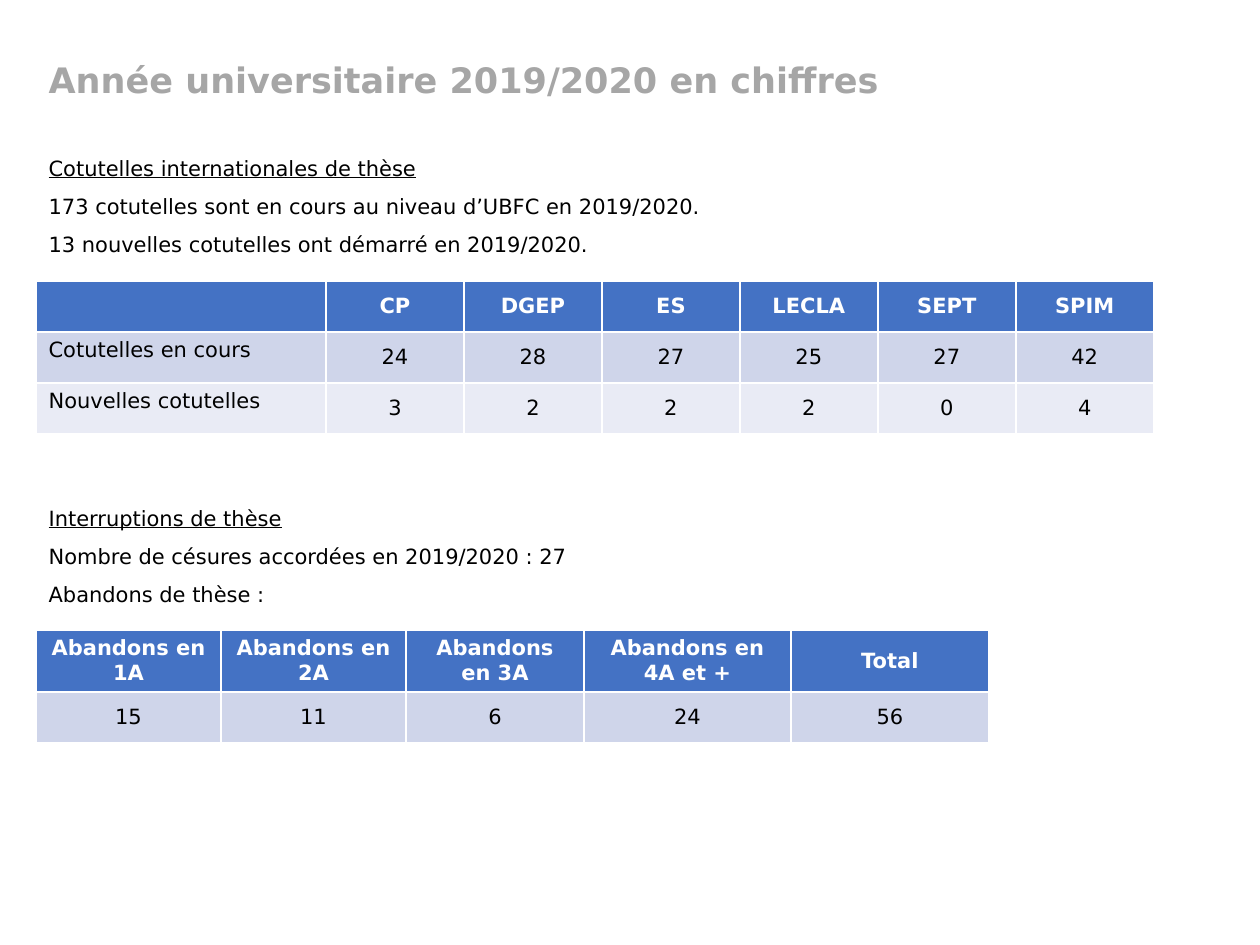
from pptx import Presentation
from pptx.dml.color import RGBColor
from pptx.enum.text import MSO_ANCHOR as Anchor, MSO_AUTO_SIZE as AutoSize, PP_ALIGN as Align
from pptx.util import Emu, Pt

EMU_PER_INCH = 914400
PX_PER_INCH = 126

BLACK = RGBColor(0x00, 0x00, 0x00)
WHITE = RGBColor(0xFF, 0xFF, 0xFF)
GREY = RGBColor(0xA6, 0xA6, 0xA6)
BLUE = RGBColor(0x44, 0x72, 0xC4)
BANDS = [RGBColor(0xCF, 0xD5, 0xEA), RGBColor(0xE9, 0xEB, 0xF5)]

LEFT = 36
ROW_HEIGHT = 51

COTUTELLES = [
    ["", "CP", "DGEP", "ES", "LECLA", "SEPT", "SPIM"],
    ["Cotutelles en cours", "24", "28", "27", "25", "27", "42"],
    ["Nouvelles cotutelles", "3", "2", "2", "2", "0", "4"],
]
ABANDONS = [
    ["Abandons en 1A", "Abandons en 2A", "Abandons en 3A", "Abandons en 4A et +", "Total"],
    ["15", "11", "6", "24", "56"],
]


def px(length):
    return Emu(round(length * EMU_PER_INCH / PX_PER_INCH))


class SlideBuilder:
    font_name = "DejaVu Sans"
    text_size = 12
    title_size = 20

    def __init__(self, slide):
        self.slide = slide

    def add_run(self, paragraph, text, color, size=text_size, bold=False, underline=False):
        run = paragraph.add_run()
        run.text = text
        font = run.font
        font.name = self.font_name
        font.size = Pt(size)
        font.bold = bold
        font.underline = underline
        font.color.rgb = color

    def place(self, shape, left, top, width, height):
        shape.left, shape.top = px(left), px(top)
        shape.width, shape.height = px(width), px(height)
        frame = shape.text_frame
        frame.word_wrap = True
        frame.auto_size = AutoSize.NONE
        frame.vertical_anchor = Anchor.TOP
        return frame

    def title(self, text, box):
        frame = self.place(self.slide.shapes.title, *box)
        paragraph = frame.paragraphs[0]
        paragraph.alignment = Align.LEFT
        self.add_run(paragraph, text, GREY, self.title_size, bold=True)

    def section(self, index, heading, lines, box):
        frame = self.place(self.slide.placeholders[index], *box)
        for position, text in enumerate([heading, *lines]):
            paragraph = frame.paragraphs[0] if position == 0 else frame.add_paragraph()
            properties = paragraph._p.get_or_add_pPr()
            properties.set("marL", "0")
            properties.set("indent", "0")
            properties.insert_element_before(
                properties.makeelement(
                    "{http://schemas.openxmlformats.org/drawingml/2006/main}buNone"
                ),
                "a:tabLst", "a:defRPr", "a:extLst",
            )
            paragraph.alignment = Align.JUSTIFY
            paragraph.line_spacing = 1.5
            paragraph.space_before = Pt(0)
            self.add_run(paragraph, text, BLACK, underline=position == 0)

    def table(self, rows, top, widths, heights):
        table = self.slide.shapes.add_table(
            len(rows), len(widths), px(LEFT), px(top), px(sum(widths)), px(sum(heights))
        ).table
        for column, width in zip(table.columns, widths):
            column.width = px(width)
        for row_index, (values, height) in enumerate(zip(rows, heights)):
            table.rows[row_index].height = px(height)
            for column_index, text in enumerate(values):
                self.fill_cell(table.cell(row_index, column_index), text, row_index)

    def fill_cell(self, cell, text, row_index):
        header = row_index == 0
        cell.fill.solid()
        cell.fill.fore_color.rgb = BLUE if header else BANDS[(row_index - 1) % len(BANDS)]
        if not text:
            return
        paragraph = cell.text_frame.paragraphs[0]
        if header or text.isdigit():
            cell.vertical_anchor = Anchor.MIDDLE
            paragraph.alignment = Align.CENTER
        self.add_run(paragraph, text, WHITE if header else BLACK, bold=header)


def main():
    presentation = Presentation()
    presentation.slide_width = px(1260)
    presentation.slide_height = px(945)
    two_content = presentation.slide_layouts[3]
    builder = SlideBuilder(presentation.slides.add_slide(two_content))

    builder.title("Année universitaire 2019/2020 en chiffres", (LEFT, 52, 968, 55))
    builder.section(
        1,
        "Cotutelles internationales de thèse",
        [
            "173 cotutelles sont en cours au niveau d’UBFC en 2019/2020.",
            "13 nouvelles cotutelles ont démarré en 2019/2020.",
        ],
        (LEFT, 137, 1191, 122),
    )
    builder.section(
        2,
        "Interruptions de thèse",
        ["Nombre de césures accordées en 2019/2020 : 27", "Abandons de thèse :"],
        (LEFT, 487, 1191, 127),
    )
    builder.table(COTUTELLES, 281, [290] + [138] * 6, [ROW_HEIGHT] * 3)
    builder.table(ABANDONS, 630, [185, 185, 178, 207, 198], [62, ROW_HEIGHT])
    presentation.save("out.pptx")


if __name__ == "__main__":
    main()
